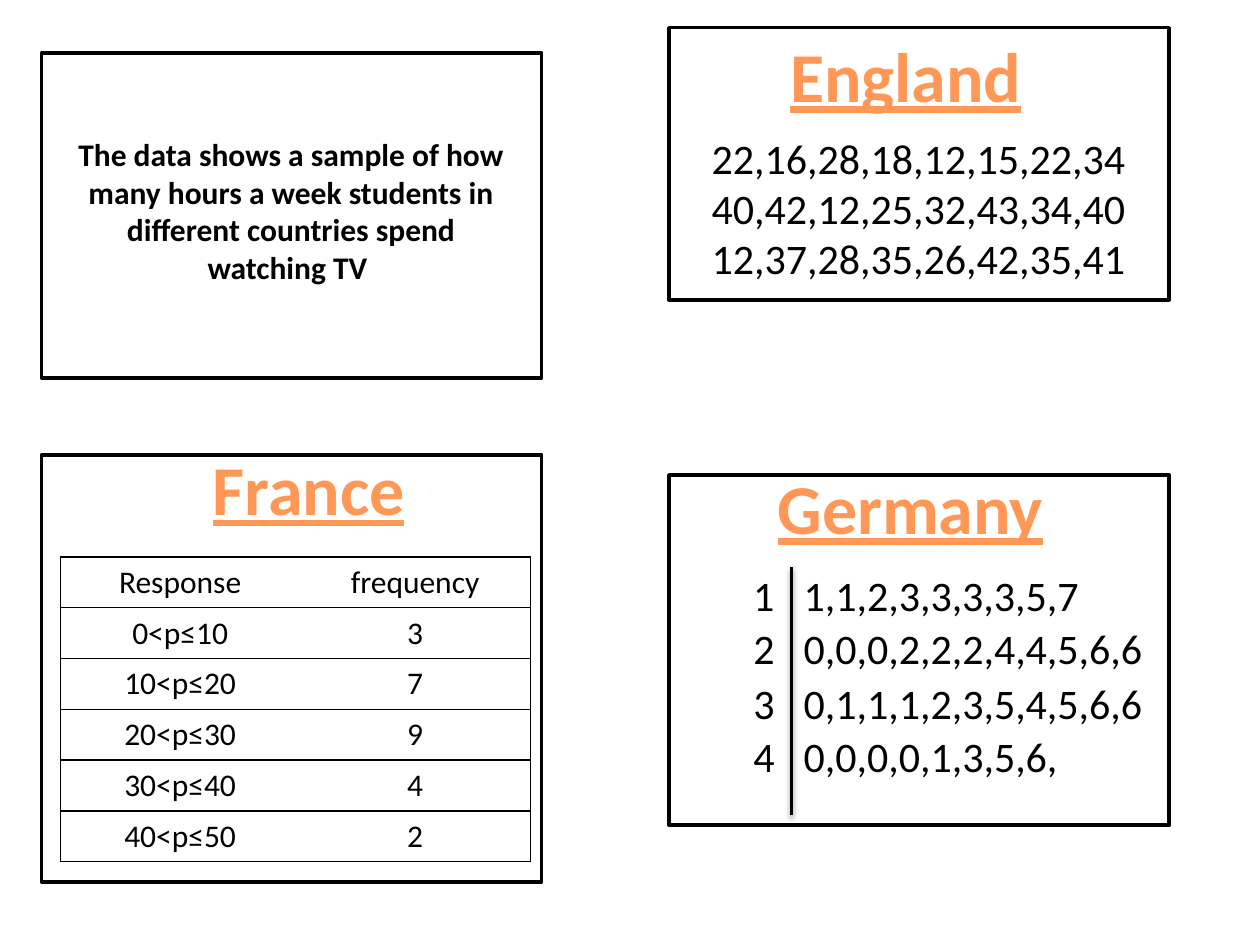
from dataclasses import dataclass

from lxml import etree
from pptx import Presentation
from pptx.dml.color import RGBColor
from pptx.enum.shapes import MSO_CONNECTOR, MSO_SHAPE
from pptx.enum.text import MSO_ANCHOR, MSO_AUTO_SIZE, PP_ALIGN
from pptx.oxml import parse_xml
from pptx.oxml.ns import nsdecls, qn
from pptx.util import Inches, Pt

LEFT, CENTER = PP_ALIGN.LEFT, PP_ALIGN.CENTER


@dataclass(frozen=True)
class Theme:
    font: str = "Calibri"
    ink: str = "000000"
    paper: str = "FFFFFF"
    heading_stops: tuple = ((0, "9D4700"), (78, "FF9856"), (100, "FFF5F1"))
    heading: int = 40
    data: int = 24
    body: int = 18
    line: int = 2
    border: int = 1


T = Theme()
INK = RGBColor.from_string(T.ink)
PAPER = RGBColor.from_string(T.paper)


def write(tf, text, size, align=LEFT, bold=False, heading=False, hang=0):
    """Fill a text frame, one paragraph a line; hang is where a tab lands."""
    for i, line in enumerate(text.split("\n")):
        p = tf.paragraphs[0] if i == 0 else tf.add_paragraph()
        p.alignment = align
        if hang:
            pPr = p._p.get_or_add_pPr()
            pPr.set("marL", str(Inches(hang)))
            pPr.set("indent", str(-Inches(hang)))
        r = p.add_run()
        r.text = line
        r.font.name, r.font.size, r.font.bold = T.font, Pt(size), bold
        if heading:
            r.font.underline = True
            stops = "".join(f'<a:gs pos="{pos * 1000}"><a:srgbClr val="{c}"/></a:gs>'
                            for pos, c in T.heading_stops)
            r._r.get_or_add_rPr().insert(0, parse_xml(
                f'<a:gradFill {nsdecls("a")}><a:gsLst>{stops}</a:gsLst>'
                '<a:lin ang="5400000"/></a:gradFill>'))
        else:
            r.font.color.rgb = INK


def add_text(shapes, box, text, size, **fmt):
    tb = shapes.add_textbox(*map(Inches, box))
    tb.text_frame.word_wrap = False
    tb.text_frame.auto_size = MSO_AUTO_SIZE.SHAPE_TO_FIT_TEXT
    write(tb.text_frame, text, size, **fmt)


prs = Presentation()
prs.slide_width, prs.slide_height = Inches(10), Inches(7.5)
s = prs.slides.add_slide(prs.slide_layouts[5])

# Panels with their country headings
panels = [
    ((0.33, 0.42, 3.97, 2.58), None, None),
    ((5.31, 0.22, 3.97, 2.16), "England", (6.16, 0.21, 2.06, 0.77)),
    ((5.31, 3.77, 3.97, 2.78), "Germany", (6.06, 3.64, 2.33, 0.77)),
    ((0.33, 3.61, 3.97, 3.39), "France", (1.58, 3.49, 1.74, 0.77)),
]
for box, country, heading_box in panels:
    panel = s.shapes.add_shape(MSO_SHAPE.RECTANGLE, *map(Inches, box))
    panel.shadow.inherit = False
    panel.fill.solid()
    panel.fill.fore_color.rgb = PAPER
    panel.line.color.rgb = INK
    panel.line.width = Pt(T.line)
    if country:
        add_text(s.shapes, heading_box, country, T.heading,
                 align=CENTER, bold=True, heading=True)

# Introduction, brought in front of its panel
title = s.shapes.title
title.left, title.top, title.width, title.height = map(Inches, (0.49, 1.02, 3.64, 1.31))
tf = title.text_frame
tf.word_wrap = True
tf.auto_size = MSO_AUTO_SIZE.NONE
tf.vertical_anchor = MSO_ANCHOR.TOP
write(tf, "The data shows a sample of how many hours a week students in "
      "different countries spend watching TV ", T.body, align=CENTER, bold=True)
s.shapes._spTree.append(title._element)

# England: raw data
add_text(s.shapes, (5.55, 1, 3.51, 1.3),
         "22,16,28,18,12,15,22,34\n40,42,12,25,32,43,34,40\n12,37,28,35,26,42,35,41",
         T.data)

# Germany: stem and leaf diagram
stem_line = s.shapes.add_connector(MSO_CONNECTOR.STRAIGHT, Inches(6.28), Inches(4.5),
                                   Inches(6.28), Inches(6.47))
stem_line.line.color.rgb = INK
stem_line.line.width = Pt(T.line)
effects = etree.SubElement(stem_line._element.spPr, qn("a:effectLst"))
effects.append(parse_xml(
    f'<a:outerShdw {nsdecls("a")} blurRad="{Pt(3.1)}" dist="{Pt(1.6)}" dir="5400000" '
    f'rotWithShape="0"><a:srgbClr val="{T.ink}"><a:alpha val="38000"/></a:srgbClr>'
    '</a:outerShdw>'))
leaves = [
    (4.47, 2.8, "1,1,2,3,3,3,3,5,7"),
    (4.89, 3.39, "0,0,0,2,2,2,4,4,5,6,6"),
    (5.33, 3.31, "0,1,1,1,2,3,5,4,5,6,6"),
    (5.75, 2.72, "0,0,0,0,1,3,5,6,"),
]
for stem, (top, width, leaf) in enumerate(leaves, 1):
    add_text(s.shapes, (5.88, top, width, 0.5), f"{stem}\t{leaf}", T.data, hang=0.4)

# France: grouped frequency table
rows = [("Response", "frequency"), ("0<p≤10", "3"), ("10<p≤20", "7"),
        ("20<p≤30", "9"), ("30<p≤40", "4"), ("40<p≤50", "2")]
table = s.shapes.add_table(len(rows), 2, Inches(0.48), Inches(4.42),
                           Inches(3.73), Inches(2.42)).table
table.first_row = table.horz_banding = False
for col, width in zip(table.columns, (1.9, 1.83)):
    col.width = Inches(width)
for i, row in enumerate(rows):
    for j, text in enumerate(row):
        cell = table.cell(i, j)
        write(cell.text_frame, text, T.body, align=CENTER)
        tcPr = cell._tc.get_or_add_tcPr()
        for side, shown in (("L", j == 0), ("R", j == 1), ("T", True), ("B", True)):
            ink = f'<a:solidFill><a:srgbClr val="{T.ink}"/></a:solidFill>'
            tcPr.append(parse_xml(f'<a:ln{side} {nsdecls("a")} w="{Pt(T.border)}">'
                                  f'{ink if shown else "<a:noFill/>"}</a:ln{side}>'))
        cell.fill.solid()
        cell.fill.fore_color.rgb = PAPER

prs.save("out.pptx")
